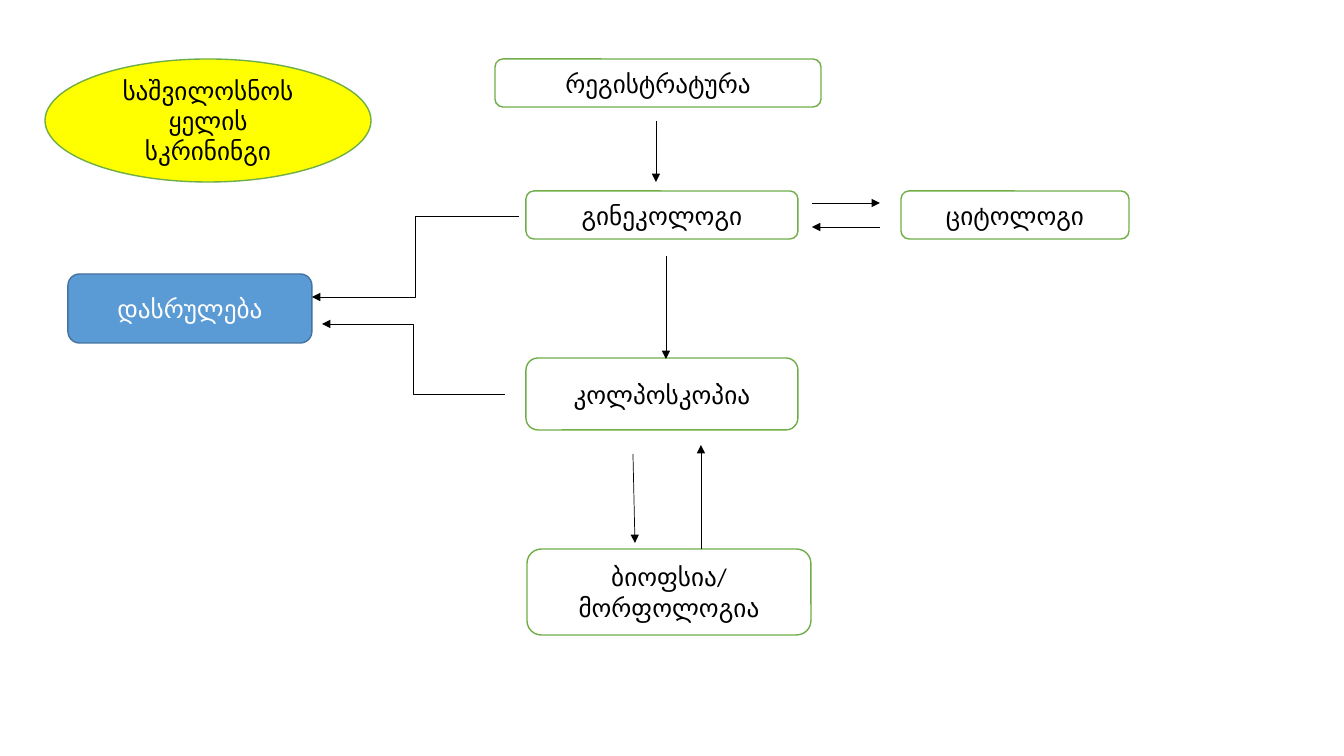
from pptx import Presentation
from pptx.dml.color import RGBColor
from pptx.enum.shapes import MSO_CONNECTOR, MSO_SHAPE
from pptx.enum.text import MSO_ANCHOR, PP_ALIGN
from pptx.oxml.ns import qn
from pptx.util import Pt
from lxml.etree import SubElement

EMU_PER_PX = 914400 / 100.8
COLORS = {
    "white": "FFFFFF", "black": "000000", "yellow": "FFFF00",
    "green": "70AD47", "blue": "5B9BD5", "dark_blue": "43739E",
}


def px(length):
    return round(length * EMU_PER_PX)


def color(name):
    return RGBColor.from_string(COLORS[name])


def add_node(slide, box, lines, fill="white", outline="green", ink="black",
             kind=MSO_SHAPE.ROUNDED_RECTANGLE):
    shape = slide.shapes.add_shape(kind, *map(px, box))
    shape.shadow.inherit = False
    shape.fill.solid()
    shape.fill.fore_color.rgb = color(fill)
    shape.line.color.rgb = color(outline)
    shape.line.width = Pt(1)
    frame = shape.text_frame
    frame.word_wrap = True
    frame.vertical_anchor = MSO_ANCHOR.MIDDLE
    frame.text = "\n".join(lines)
    for paragraph in frame.paragraphs:
        paragraph.alignment = PP_ALIGN.CENTER
        paragraph.font.name = "Calibri"
        paragraph.font.size = Pt(18)
        paragraph.font.color.rgb = color(ink)


def add_arrow(slide, start, end, kind=MSO_CONNECTOR.STRAIGHT):
    connector = slide.shapes.add_connector(kind, *map(px, start + end))
    connector.line.color.rgb = color("black")
    connector.line.width = Pt(0.5)
    SubElement(connector.line._get_or_add_ln(), qn("a:tailEnd"), type="triangle")
    SubElement(connector._element.spPr, qn("a:effectLst"))


def add_title(slide, box):
    add_node(slide, box, ["საშვილოსნოს ყელის სკრინინგი"], fill="yellow",
             kind=MSO_SHAPE.OVAL)


def add_main_path(slide, box):
    left, top, width, height = box
    # Steps from registration down to biopsy
    add_node(slide, (left, top, width, 48), ["რეგისტრატურა"])
    add_node(slide, (left + 31, top + 132, 272, 48), ["გინეკოლოგი"])
    add_node(slide, (left + 31, top + 299, 272, 72), ["კოლპოსკოპია"])
    add_node(slide, (left + 32, top + height - 86, 284, 86),
             ["ბიოფსია/", "მორფოლოგია"])
    # Arrows between the steps
    for start_x, start_y, end_x, end_y in (
            (161, 62, 161, 123), (171, 197, 171, 300),
            (138, 395, 140, 484), (206, 490, 206, 386)):
        add_arrow(slide, (left + start_x, top + start_y),
                  (left + end_x, top + end_y))


def add_cytology(slide, box):
    left, top, width, height = box
    node_width = 228
    add_node(slide, (left + width - node_width, top, node_width, height),
             ["ციტოლოგი"])
    # Exchange with the gynaecologist
    near, far = left, left + 68
    add_arrow(slide, (near, top + 12), (far, top + 12))
    add_arrow(slide, (far, top + 36), (near, top + 36))


def add_completion(slide, box):
    left, top, width, height = box
    right = left + width
    add_node(slide, box, ["დასრულება"], fill="blue", outline="dark_blue",
             ink="white")
    # Returns from the gynaecologist and from colposcopy
    add_arrow(slide, (right + 207, top - 58), (right, top + 23),
              MSO_CONNECTOR.ELBOW)
    add_arrow(slide, (right + 193, top + 120), (right + 10, top + 50),
              MSO_CONNECTOR.ELBOW)


def main():
    presentation = Presentation()
    presentation.slide_width = px(1344)
    presentation.slide_height = px(756)
    slide = presentation.slides.add_slide(presentation.slide_layouts[6])
    add_title(slide, (45, 59, 326, 123))
    add_main_path(slide, (495, 59, 326, 576))
    add_cytology(slide, (812, 191, 317, 48))
    add_completion(slide, (68, 274, 244, 69))
    presentation.save("out.pptx")


if __name__ == "__main__":
    main()
